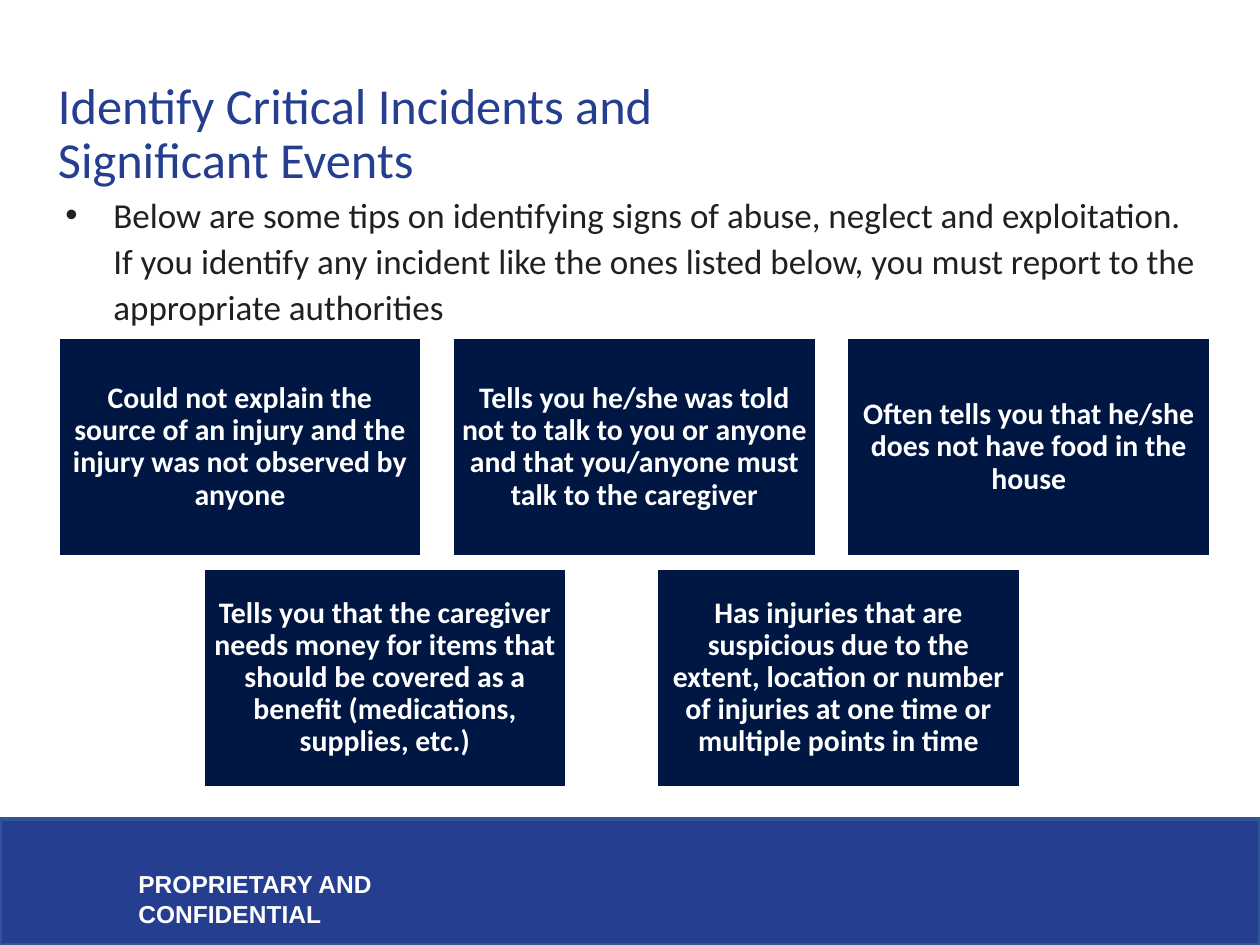
from lxml import etree
from pptx import Presentation
from pptx.dml.color import RGBColor
from pptx.enum import shapes, text
from pptx.oxml.ns import qn
from pptx.util import Inches, Pt

BLUE = RGBColor(0x25, 0x3E, 0x90)
EDGE = RGBColor(0x2F, 0x55, 0x97)
NAVY = RGBColor(0x00, 0x17, 0x44)
INK = RGBColor(0x23, 0x1F, 0x20)
WHITE = RGBColor(0xFF, 0xFF, 0xFF)

ROWS = [
    (0.46, 2.68, 3.13, [
        "Could not explain the source of an injury and the injury was not observed by anyone",
        "Tells you he/she was told not to talk to you or anyone and that you/anyone must talk to the caregiver",
        "Often tells you that he/she does not have food in the house",
    ]),
    (1.61, 4.51, 3.6, [
        "Tells you that the caregiver needs money for items that should be covered as a benefit (medications, supplies, etc.)",
        "Has injuries that are suspicious due to the extent, location or number of injuries at one time or multiple points in time",
    ]),
]


def write(shape, words, inset, anchor, font, para):
    frame = shape.text_frame
    frame.word_wrap = True
    frame.vertical_anchor = anchor
    for side, size in zip(("left", "top", "right", "bottom"), inset):
        setattr(frame, f"margin_{side}", Inches(size))
    line = frame.paragraphs[0]
    run = line.add_run()
    run.text = words
    for key, value in para.items():
        setattr(line, key, value)
    run.font.color.rgb = font["color"]
    for key in ("name", "size", "bold"):
        setattr(run.font, key, font[key])
    return line


def add_rect(slide, box, fill, edge):
    rect = slide.shapes.add_shape(shapes.MSO_SHAPE.RECTANGLE, *map(Inches, box))
    rect.shadow.inherit = False
    rect.fill.solid()
    rect.fill.fore_color.rgb = fill
    rect.line.color.rgb = edge
    rect.line.width = Pt(2)
    return rect


def add_text(slide, box, *style):
    return write(slide.shapes.add_textbox(*map(Inches, box)), *style)


def add_footer(slide, box):
    left, top, width, height = box
    add_rect(slide, box, BLUE, EDGE)
    add_text(slide, (left + 1, top + 0.35, 3.31, 0.34),
             "PROPRIETARY AND CONFIDENTIAL",
             (0.1, 0.05, 0.1, 0.05), text.MSO_ANCHOR.TOP,
             dict(name="Arial", size=Pt(14), bold=True, color=WHITE), {})


def add_title(slide, box):
    add_text(slide, box, "Identify Critical Incidents and Significant Events",
             (0, 0, 0, 0), text.MSO_ANCHOR.BOTTOM,
             dict(name="Calibri", size=Pt(28.8), bold=False, color=BLUE),
             dict(line_spacing=Pt(31)))


def add_intro(slide, box):
    line = add_text(
        slide, box,
        "Below are some tips on identifying signs of abuse, neglect and exploitation. "
        "If you identify any incident like the ones listed below, you must report to the "
        "appropriate authorities",
        (0, 0, 0, 0), text.MSO_ANCHOR.TOP,
        dict(name="Calibri", size=Pt(20), bold=False, color=INK),
        dict(line_spacing=1.1, space_after=Pt(2)))
    props = line._p.get_or_add_pPr()
    props.set("marL", str(Inches(0.4)))
    props.set("indent", str(Inches(-0.38)))
    etree.SubElement(props, qn("a:buFont")).set("typeface", "Arial")
    etree.SubElement(props, qn("a:buChar")).set("char", "•")


def add_row(slide, left, top, pitch, tips):
    for col, tip in enumerate(tips):
        card = add_rect(slide, (left + col * pitch, top, 2.89, 1.74), NAVY, WHITE)
        write(card, tip, (0.07,) * 4, text.MSO_ANCHOR.MIDDLE,
              dict(name="Calibri", size=Pt(17), bold=True, color=WHITE),
              dict(line_spacing=0.9, alignment=text.PP_ALIGN.CENTER))


def main():
    deck = Presentation()
    deck.slide_width, deck.slide_height = Inches(10), Inches(7.5)
    slide = deck.slides.add_slide(deck.slide_layouts[6])
    add_footer(slide, (0, 6.5, 10, 1))
    add_title(slide, (0.46, 0.67, 5.67, 0.83))
    add_intro(slide, (0.5, 1.5, 9, 4.78))
    for row in ROWS:
        add_row(slide, *row)
    deck.save("out.pptx")


if __name__ == "__main__":
    main()
